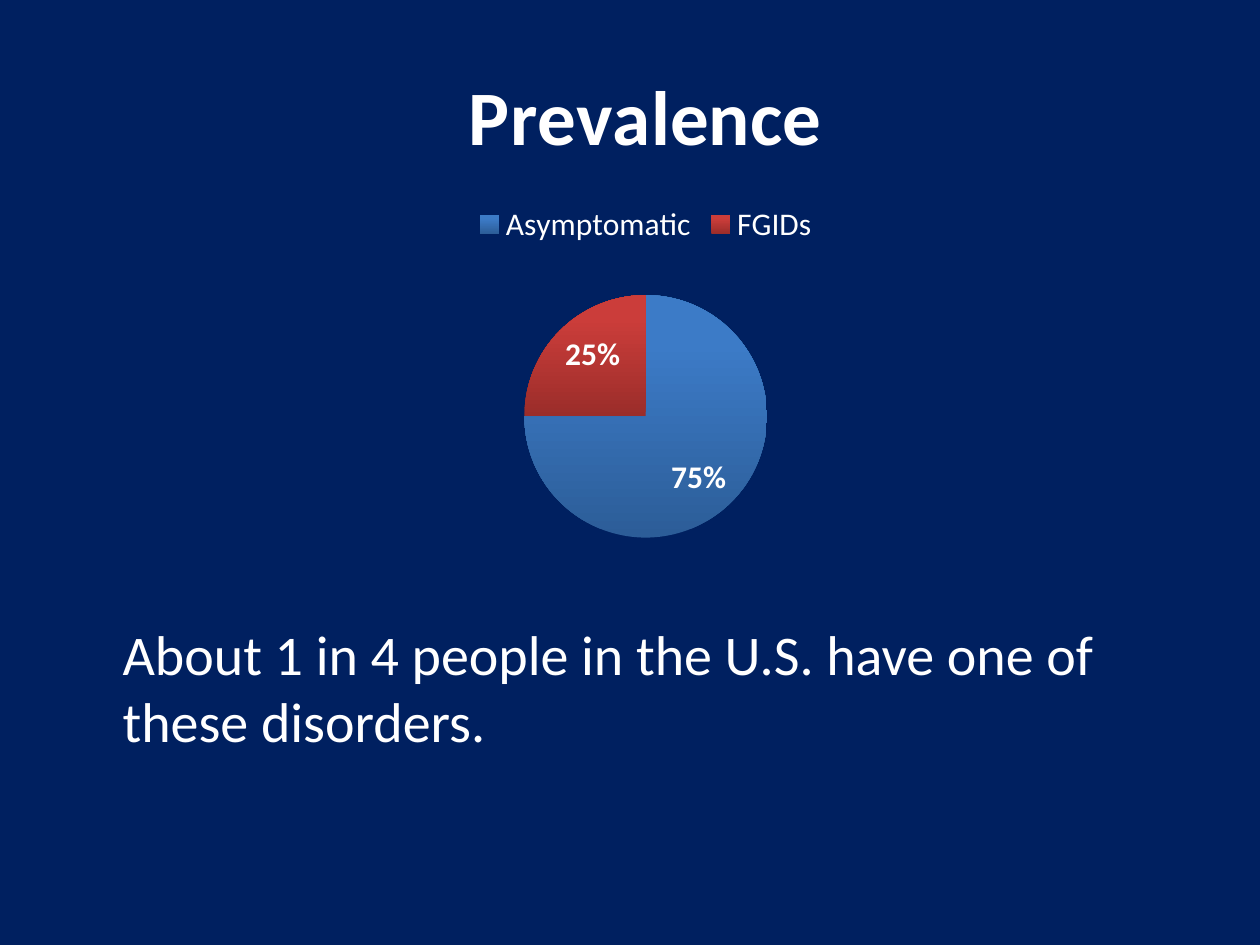
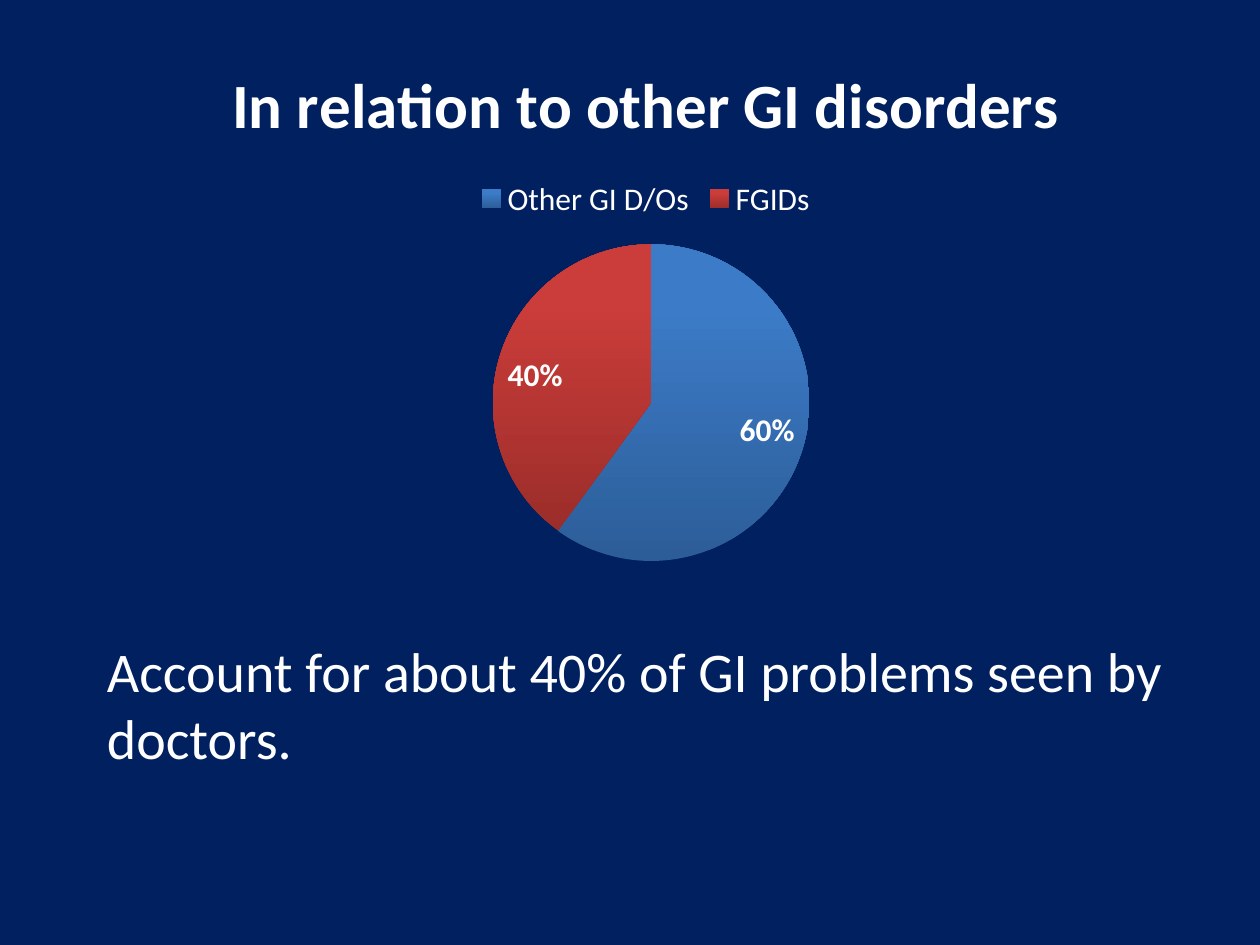
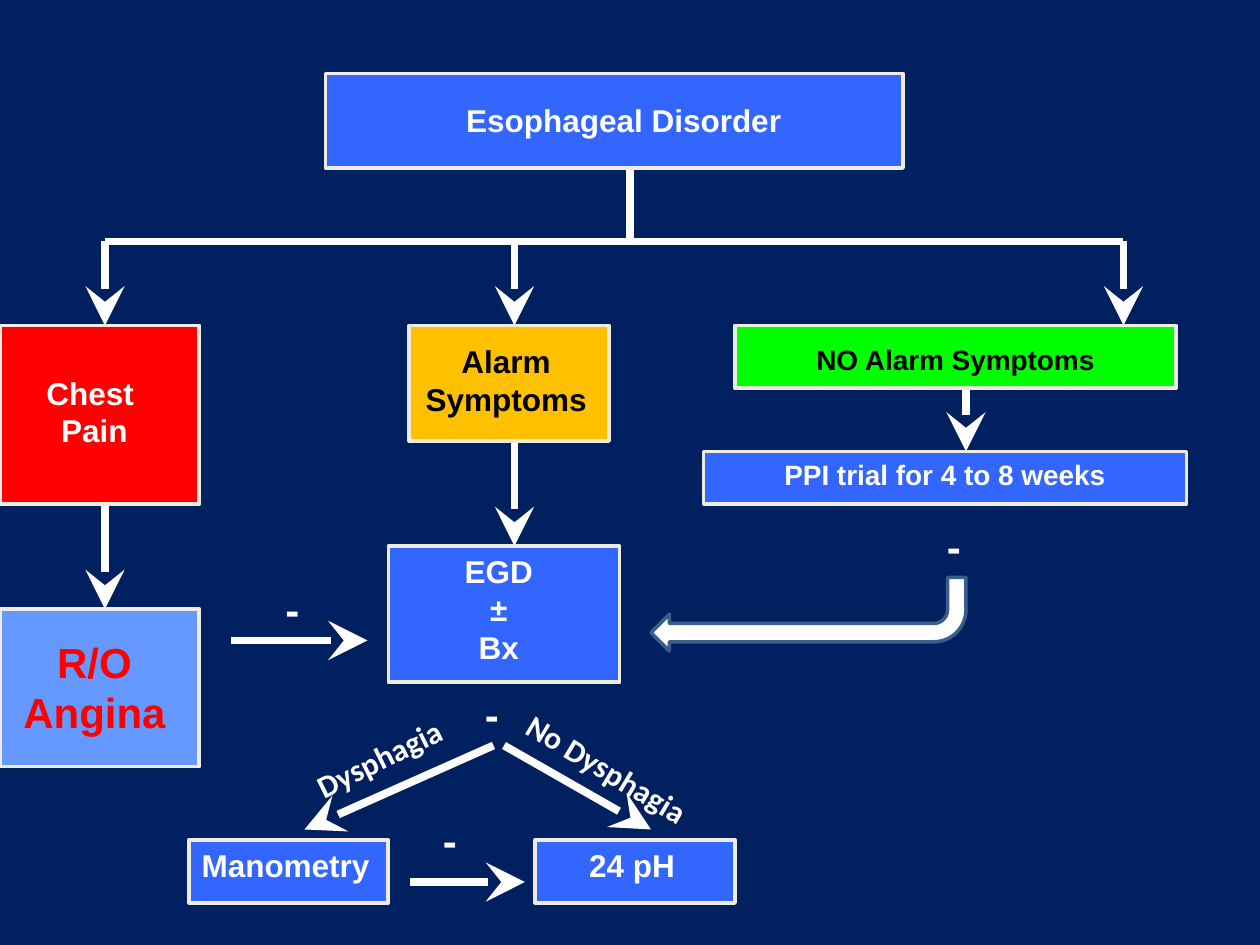
from lxml import etree
from pptx import Presentation
from pptx import util as u
from pptx.chart.data import CategoryChartData
from pptx.dml.color import RGBColor
from pptx.enum import chart as ch
from pptx.enum import shapes, text
from pptx.oxml import parse_xml
from pptx.oxml.ns import nsdecls, qn

PX = 7620  # EMU in one px: 120 px to the inch
BLANK = 6

NAVY = RGBColor(0x00, 0x20, 0x60)
WHITE = RGBColor(0xFF, 0xFF, 0xFF)
BLACK = RGBColor(0x00, 0x00, 0x00)
BLUE = RGBColor(0x33, 0x66, 0xFF)
SKY = RGBColor(0x66, 0x99, 0xFF)
RED = RGBColor(0xFF, 0x00, 0x00)
GREEN = RGBColor(0x00, 0xFF, 0x00)
AMBER = RGBColor(0xFF, 0xC0, 0x00)
CREAM = RGBColor(0xEE, 0xEC, 0xE1)
STEEL = RGBColor(0x3A, 0x5F, 0x8C)
# Pie slices: dark at the bottom, light at the top
SLICES = [
    (RGBColor(0x2C, 0x5D, 0x98), RGBColor(0x3C, 0x7B, 0xC7)),
    (RGBColor(0x9B, 0x2D, 0x2A), RGBColor(0xCB, 0x3D, 0x3A)),
]


def add_text(s, words, box, size=18, font="Arial", color=WHITE, bold=True,
             align=text.PP_ALIGN.CENTER, wrap=True, rotation=0):
    sp = s.shapes.add_textbox(*[v * PX for v in box])
    sp.rotation = rotation
    tf = sp.text_frame
    tf.word_wrap = wrap
    for i, line in enumerate(words.split("\n")):
        p = tf.add_paragraph() if i else tf.paragraphs[0]
        p.alignment = align
        r = p.add_run()
        r.text = line
        r.font.size = u.Pt(size)
        r.font.name = font
        r.font.bold = bold
        r.font.color.rgb = color


def add_shape(s, kind, box, fill, line, width):
    sp = s.shapes.add_shape(kind, *[v * PX for v in box])
    sp.shadow.inherit = False
    sp.fill.solid()
    sp.fill.fore_color.rgb = fill
    sp.line.color.rgb = line
    sp.line.width = u.Pt(width)
    return sp


prs = Presentation()
prs.slide_width = 1200 * PX
prs.slide_height = 900 * PX
for _ in range(3):
    s = prs.slides.add_slide(prs.slide_layouts[BLANK])
    s.background.fill.solid()
    s.background.fill.fore_color.rgb = NAVY
*pie_slides, flow = prs.slides

# Pie slides: title, its size, slices, plot area (share of chart), caption, its box
pies = [
    ("Prevalence", 44, {"Asymptomatic": 75, "FGIDs": 25}, (0.39, 0.48, 0.22, 0.45),
     "About 1 in 4 people in the U.S. have one of these disorders.", (105, 584, 1035, 142)),
    ("In relation to other GI disorders", 36, {"Other GI D/Os": 60, "FGIDs": 40},
     (0.36, 0.39, 0.29, 0.58),
     "Account for about 40% of GI problems seen by doctors.", (90, 600, 1040, 142)),
]
for s, (title, size, shares, area, caption, box) in zip(pie_slides, pies):
    data = CategoryChartData()
    data.categories = list(shares)
    data.add_series(title, list(shares.values()))
    chart = s.shapes.add_chart(ch.XL_CHART_TYPE.PIE, 90 * PX, 30 * PX,
                               1050 * PX, 520 * PX, data).chart
    chart.font.size = u.Pt(18)
    chart.font.name = "Calibri"
    chart.font.color.rgb = WHITE

    # Chart title and legend
    chart.has_title = True
    p = chart.chart_title.text_frame.paragraphs[0]
    r = p.add_run()
    r.text = title
    r.font.size = u.Pt(size)
    r.font.name = "Calibri"
    r.font.bold = True
    r.font.color.rgb = WHITE
    chart.has_legend = True
    chart.legend.position = ch.XL_LEGEND_POSITION.TOP
    chart.legend.include_in_layout = False

    # Slices and their labels
    plot = chart.plots[0]
    plot.vary_by_categories = True
    for i, (dark, light) in enumerate(SLICES):
        fill = plot.series[0].points[i].format.fill
        fill.gradient()
        fill.gradient_angle = 90
        first, last = fill.gradient_stops
        first.color.rgb, first.position = dark, 0
        last.color.rgb, last.position = light, 0.8
    plot.has_data_labels = True
    labels = plot.data_labels
    labels.show_percentage = True
    labels.show_value = False
    labels.number_format = "0%"
    labels.number_format_is_linked = False
    labels.position = ch.XL_LABEL_POSITION.INSIDE_END
    labels.font.bold = True
    labels.font.size = u.Pt(18)
    labels.font.name = "Calibri"
    labels.font.color.rgb = WHITE

    # Fixed plot area
    plot_area = chart.element.find(".//" + qn("c:plotArea"))
    for old in plot_area.findall(qn("c:layout")):
        plot_area.remove(old)
    marks = '<c:layoutTarget val="inner"/><c:xMode val="edge"/><c:yMode val="edge"/>'
    marks += "".join(f'<c:{k} val="{v}"/>' for k, v in zip("xywh", area))
    plot_area.insert(0, parse_xml(
        f'<c:layout {nsdecls("c")}><c:manualLayout>{marks}</c:manualLayout></c:layout>'))

    add_text(s, caption, box, size=32, font="Calibri", bold=False,
             align=text.PP_ALIGN.LEFT)

# Flow chart: lines as (x1, y1, x2, y2, has an arrowhead)
lines = [
    (600, 160, 600, 230, False),
    (100, 230, 1070, 230, False),
    (100, 230, 100, 310, True),
    (490, 230, 490, 310, True),
    (1070, 230, 1070, 310, True),
    (920, 370, 920, 430, True),
    (490, 420, 490, 520, True),
    (100, 480, 100, 580, True),
    (220, 610, 350, 610, True),
    (470, 710, 290, 790, True),
    (480, 710, 620, 790, True),
    (390, 840, 500, 840, True),
]
for *ends, arrow in lines:
    c = flow.shapes.add_connector(shapes.MSO_CONNECTOR.STRAIGHT, *[v * PX for v in ends])
    c.line.color.rgb = WHITE
    c.line.width = u.Pt(4.5)
    if arrow:
        etree.SubElement(c.line._get_or_add_ln(), qn("a:tailEnd"),
                         type="stealth", w="lg", len="lg")
    etree.SubElement(c._element.spPr, qn("a:effectLst"))

# Flow chart: boxes with their labels
steps = [
    ("Esophageal Disorder", (310, 70, 550, 90), BLUE, (430, 90, 328, 48), 18, WHITE),
    ("Chest \nPain", (0, 310, 190, 170), RED, (0, 350, 180, 85), 18, WHITE),
    ("Alarm Symptoms", (390, 310, 190, 110), AMBER, (390, 320, 184, 85), 18, BLACK),
    ("NO Alarm Symptoms", (700, 310, 420, 60), GREEN, (710, 320, 400, 44), 16, BLACK),
    ("PPI trial for 4 to 8 weeks", (670, 430, 460, 50), BLUE, (680, 430, 440, 44), 16, WHITE),
    ("EGD\n±\nBx", (370, 520, 220, 130), BLUE, (370, 520, 210, 121), 18, WHITE),
    ("R/O Angina", (0, 580, 190, 150), SKY, (0, 600, 180, 109), 24, RED),
    ("Manometry", (180, 800, 190, 60), BLUE, (180, 800, 184, 48), 18, WHITE),
    ("24 pH", (510, 800, 190, 60), BLUE, (510, 800, 184, 48), 18, WHITE),
]
for words, box, fill, label_box, size, color in steps:
    add_shape(flow, shapes.MSO_SHAPE.RECTANGLE, box, fill, CREAM, 2.25)
    add_text(flow, words, label_box, size=size, color=color)

# Flow chart: way back from the trial, negative results and branch names
bent = add_shape(flow, shapes.MSO_SHAPE.BENT_ARROW, (620, 550, 300, 70), WHITE, STEEL, 2)
bent.rotation = 180
for x, y in [(890, 490), (260, 550), (450, 650), (410, 770)]:
    add_text(flow, "-", (x, y, 37, 60), size=24, align=text.PP_ALIGN.LEFT, wrap=False)
add_text(flow, "Dysphagia", (271, 698, 180, 48), font="Calibri", rotation=333.6)
add_text(flow, "No Dysphagia", (478, 708, 200, 48), font="Calibri", rotation=31)

prs.save("out.pptx")
